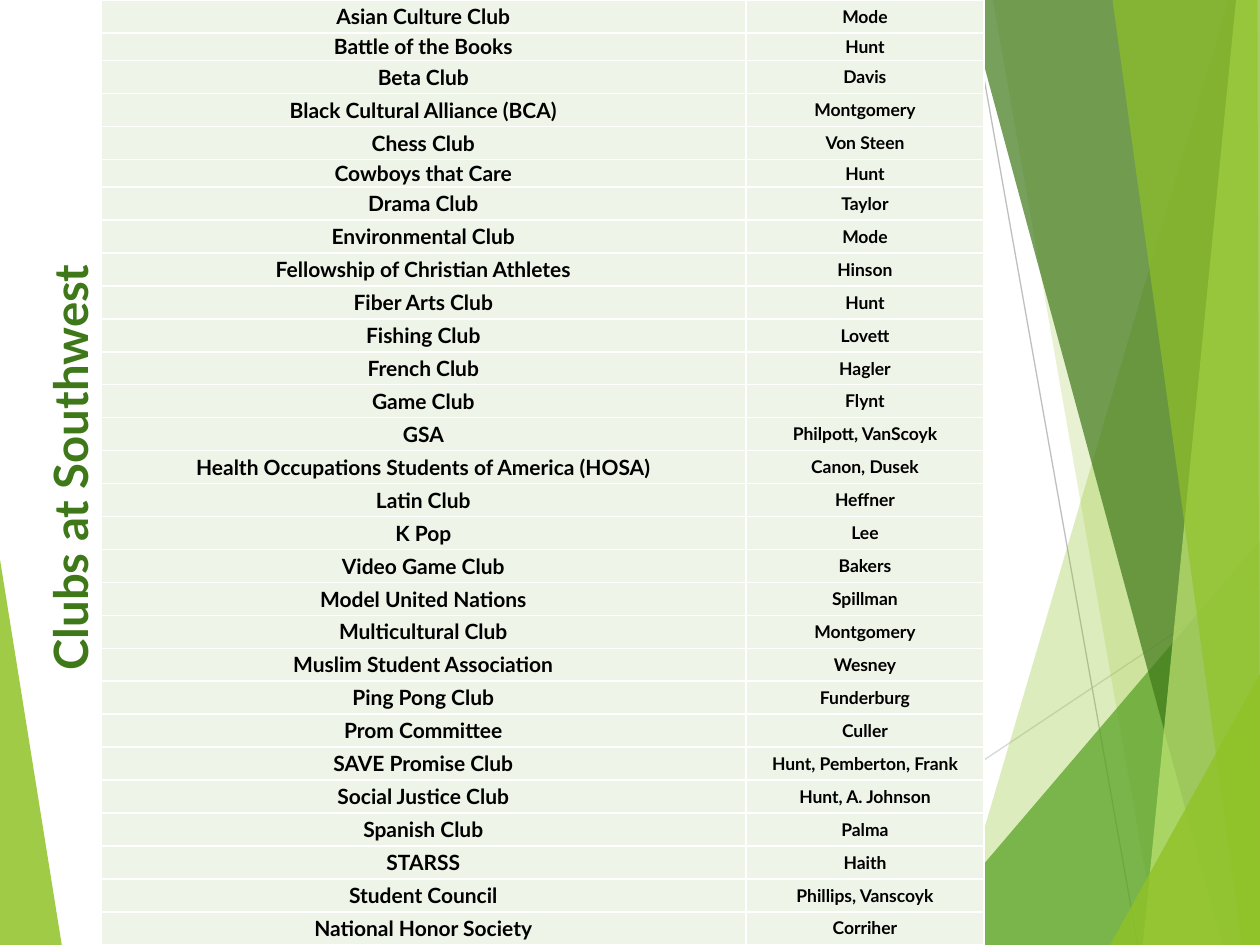
"""Build the slide listing the clubs at Southwest and their sponsors."""
from lxml import etree
from pptx import Presentation
from pptx.dml.color import RGBColor
from pptx.enum.shapes import MSO_CONNECTOR
from pptx.enum.text import MSO_ANCHOR, PP_ALIGN
from pptx.oxml.ns import qn
from pptx.util import Inches, Pt

STRAIGHT = MSO_CONNECTOR.STRAIGHT
MIDDLE = MSO_ANCHOR.MIDDLE
CENTER = PP_ALIGN.CENTER

LIME = RGBColor(0x90, 0xC2, 0x26)
GREEN = RGBColor(0x54, 0xA0, 0x21)
DARK_GREEN = RGBColor(0x3F, 0x78, 0x19)
PALE_LIME = RGBColor(0xC0, 0xE4, 0x74)
GRAY = RGBColor(0xBF, 0xBF, 0xBF)
LIGHT_GRAY = RGBColor(0xD9, 0xD9, 0xD9)
CELL_FILL = RGBColor(0xEE, 0xF4, 0xE8)
BLACK = RGBColor(0, 0, 0)
WHITE = RGBColor(0xFF, 0xFF, 0xFF)
FONT = "Lato"

W, H = 10, 7.5
TITLE = "Clubs at Southwest"
CLUBS = [
    ("Asian Culture Club", "Mode"),
    ("Battle of the Books", "Hunt"),
    ("Beta Club", "Davis"),
    ("Black Cultural Alliance (BCA)", "Montgomery"),
    ("Chess Club", "Von Steen"),
    ("Cowboys that Care", "Hunt"),
    ("Drama Club", "Taylor"),
    ("Environmental Club", "Mode"),
    ("Fellowship of Christian Athletes", "Hinson"),
    ("Fiber Arts Club", "Hunt"),
    ("Fishing Club", "Lovett"),
    ("French Club", "Hagler"),
    ("Game Club", "Flynt"),
    ("GSA", "Philpott, VanScoyk"),
    ("Health Occupations Students of America (HOSA)", "Canon, Dusek"),
    ("Latin Club", "Heffner"),
    ("K Pop", "Lee"),
    ("Video Game Club", "Bakers"),
    ("Model United Nations", "Spillman"),
    ("Multicultural Club", "Montgomery"),
    ("Muslim Student Association", "Wesney"),
    ("Ping Pong Club", "Funderburg"),
    ("Prom Committee", "Culler"),
    ("SAVE Promise Club", "Hunt, Pemberton, Frank"),
    ("Social Justice Club", "Hunt, A. Johnson"),
    ("Spanish Club", "Palma"),
    ("STARSS", "Haith"),
    ("Student Council", "Phillips, Vanscoyk"),
    ("National Honor Society", "Corriher"),
]
SHORT_ROWS = (1, 5)
SHORT_H = 0.22
COLUMNS = [(5.12, 12), (1.89, 10)]

LEFT_FACET = ([(0, 4.44), (0.49, H), (0, H)], LIME, 85)
LINES = [((5.61, H), (W, 4.57), LIGHT_GRAY), ((7.7, 0), (9.03, H), GRAY)]
RIGHT_FACETS = [
    ([(9.75, 0), (7.54, H), (W, H), (W, 0)], LIME, 30),
    ([(7.88, 0), (9.19, H), (W, H), (W, 0)], LIME, 20),
    ([(7.26, H), (W, 4.29), (W, H)], GREEN, 72),
    ([(7.67, 0), (9.7, H), (W, H), (W, 0)], DARK_GREEN, 70),
    ([(9.81, 0), (9.07, H), (W, H), (W, 0)], PALE_LIME, 70),
    ([(8.83, 0), (9.86, H), (W, H), (9.98, 0)], LIME, 65),
    ([(8.81, H), (W, 5.35), (W, H)], LIME, 80),
]


def add_facet(s, points, color, alpha):
    fb = s.shapes.build_freeform(*map(Inches, points[0]))
    fb.add_line_segments([tuple(map(Inches, pt)) for pt in points[1:]])
    sp = fb.convert_to_shape()
    sp.shadow.inherit = False
    sp.line.fill.background()
    sp.fill.solid()
    sp.fill.fore_color.rgb = color
    clr = sp.fill._xPr.find(qn("a:solidFill"))[0]
    etree.SubElement(clr, qn("a:alpha")).set("val", str(alpha * 1000))


def add_line(s, start, end, color):
    ln = s.shapes.add_connector(STRAIGHT, *map(Inches, start + end))
    ln.line.color.rgb = color
    ln.line.width = Pt(0.75)
    etree.SubElement(ln._element.spPr, qn("a:effectLst"))


def set_text(tf, text, size, color):
    tf.text = text
    p = tf.paragraphs[0]
    p.alignment = CENTER
    p.font.name = FONT
    p.font.size = Pt(size)
    p.font.bold = True
    p.font.color.rgb = color


def set_borders(cell):
    tc_pr = cell._tc.get_or_add_tcPr()
    for i, side in enumerate("LRTB"):
        ln = etree.Element(qn(f"a:ln{side}"), w=str(Pt(1)))
        fill = etree.SubElement(ln, qn("a:solidFill"))
        etree.SubElement(fill, qn("a:srgbClr"), val=str(WHITE))
        tc_pr.insert(i, ln)


def add_title(s):
    sp = s.shapes.add_textbox(Inches(-2.05), Inches(3.43), Inches(5.21), Inches(0.56))
    sp.rotation = 270
    tf = sp.text_frame
    tf.word_wrap = True
    tf.vertical_anchor = MIDDLE
    set_text(tf, TITLE, 27, DARK_GREEN)


def add_club_table(s):
    width = sum(w for w, _ in COLUMNS)
    table = s.shapes.add_table(len(CLUBS), len(COLUMNS), Inches(0.8), 0,
                               Inches(width), Inches(H)).table
    table.first_row = table.horz_banding = False
    row_h = (H - SHORT_H * len(SHORT_ROWS)) / (len(CLUBS) - len(SHORT_ROWS))
    for c, (w, _) in enumerate(COLUMNS):
        table.columns[c].width = Inches(w)
    for r, club in enumerate(CLUBS):
        table.rows[r].height = Inches(SHORT_H if r in SHORT_ROWS else row_h)
        for c, (text, (_, size)) in enumerate(zip(club, COLUMNS)):
            cell = table.cell(r, c)
            cell.margin_left = cell.margin_right = 0
            cell.margin_top = cell.margin_bottom = 0
            cell.vertical_anchor = MIDDLE
            cell.fill.solid()
            cell.fill.fore_color.rgb = CELL_FILL
            set_borders(cell)
            set_text(cell.text_frame, text, size, BLACK)


def main():
    prs = Presentation()
    prs.slide_width, prs.slide_height = Inches(W), Inches(H)
    s = prs.slides.add_slide(prs.slide_layouts[6])
    add_facet(s, *LEFT_FACET)
    for line in LINES:
        add_line(s, *line)
    for facet in RIGHT_FACETS:
        add_facet(s, *facet)
    add_title(s)
    add_club_table(s)
    prs.save("out.pptx")


if __name__ == "__main__":
    main()
